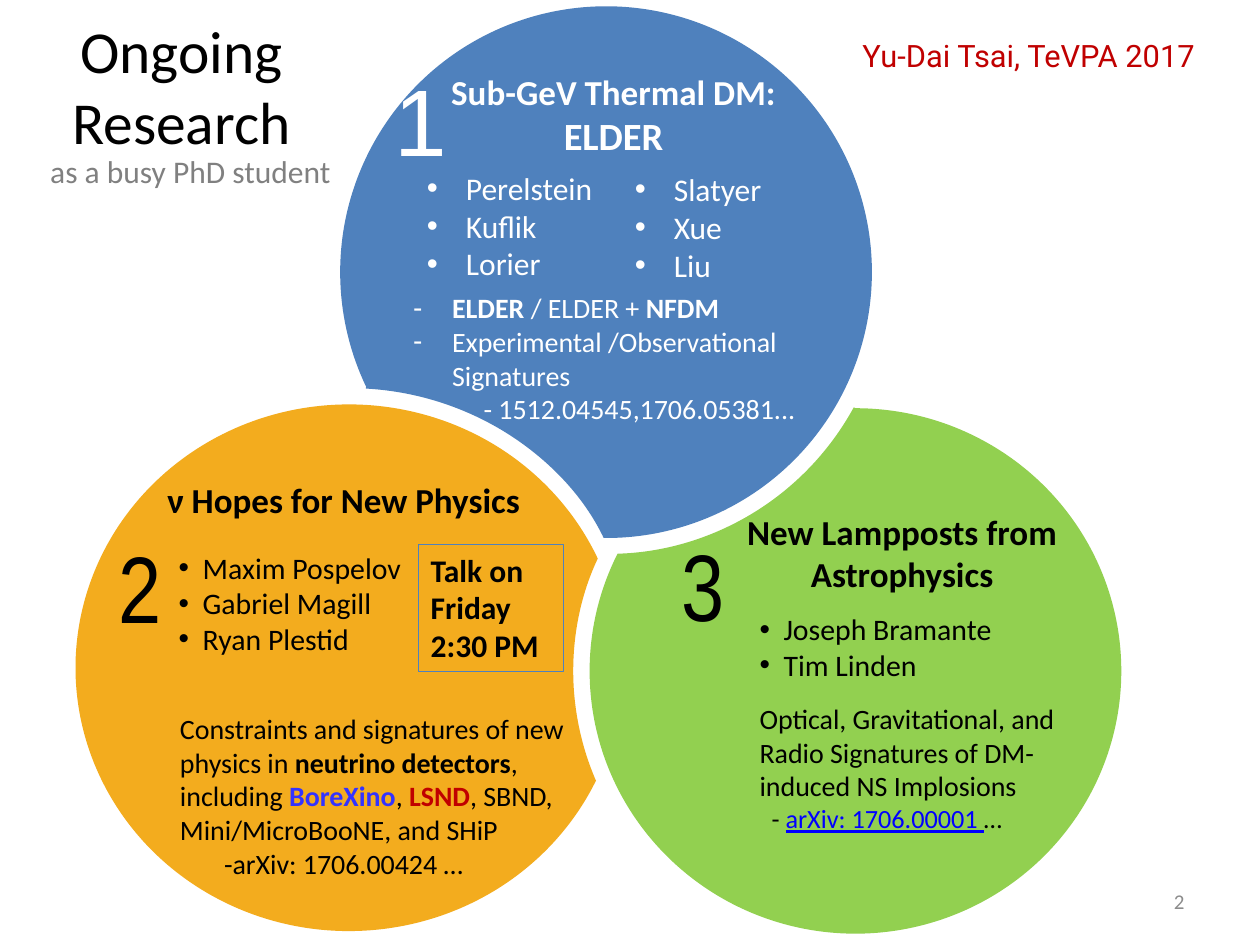
"""Build the research overview slide with three interlocking circles."""
import math
from dataclasses import dataclass
from typing import Optional

from lxml import etree
from pptx import Presentation
from pptx import util as u
from pptx.dml.color import RGBColor
from pptx.enum import shapes, text
from pptx.oxml import ns

WIDTH, HEIGHT = u.Inches(10), u.Inches(7.5)
COLUMNS = 100
CELL = WIDTH / COLUMNS
GAP = 1.3

BLACK = RGBColor(0, 0, 0)
WHITE = RGBColor(0xFF, 0xFF, 0xFF)
BLUE = RGBColor(0x4F, 0x81, 0xBD)
ORANGE = RGBColor(0xF3, 0xAC, 0x1E)
GREEN = RGBColor(0x92, 0xD0, 0x50)
RED = RGBColor(0xC0, 0, 0)
VIOLET = RGBColor(0x33, 0x33, 0xFF)
LINK = RGBColor(0, 0, 0xFF)
GRAY = RGBColor(0x80, 0x80, 0x80)
PALE = RGBColor(0x8C, 0x8C, 0x8C)

LEFT, CENTER, RIGHT = text.PP_ALIGN.LEFT, text.PP_ALIGN.CENTER, text.PP_ALIGN.RIGHT
TOP, MIDDLE = text.MSO_ANCHOR.TOP, text.MSO_ANCHOR.MIDDLE


@dataclass(frozen=True)
class Circle:
    x: float
    y: float
    rx: float
    ry: float
    color: RGBColor

    def at(self, angle: float) -> tuple[float, float]:
        return self.x + self.rx * math.cos(angle), self.y + self.ry * math.sin(angle)

    def polar(self, x: float, y: float) -> tuple[float, float]:
        dx, dy = (x - self.x) / self.rx, (y - self.y) / self.ry
        return math.hypot(dx, dy), math.atan2(dy, dx)


@dataclass(frozen=True)
class Span:
    words: str
    size: float
    color: RGBColor = BLACK
    bold: bool = False
    underline: bool = False
    font: str = "Calibri"


@dataclass(frozen=True)
class Line:
    spans: tuple[Span, ...]
    align: text.PP_ALIGN = LEFT
    bullet: str = ""
    indent: float = 0
    before: float = 0


@dataclass(frozen=True)
class Block:
    place: tuple[float, float, float, float]
    lines: tuple[Line, ...]
    anchor: text.MSO_ANCHOR = TOP
    wrap: bool = True
    border: Optional[RGBColor] = None


def cells(count: float) -> int:
    return round(count * CELL)


def single(words: str, size: float, color: RGBColor = BLACK, bold: bool = False,
           align: text.PP_ALIGN = LEFT, font: str = "Calibri") -> Line:
    return Line((Span(words, size, color, bold, font=font),), align)


def bullets(names: str, size: float, color: RGBColor, indent: float) -> tuple[Line, ...]:
    return tuple(Line((Span(name, size, color),), bullet="•", indent=indent)
                 for name in names.split(", "))


def number(digit: str, left: float, top: float, width: float, color: RGBColor, font: str) -> Block:
    return Block((left, top, width, 10.1),
                 (single(digit, 54, color, align=CENTER, font=font),), MIDDLE, False)


SUB_GEV = Circle(48.1, 21.6, 21.1, 21.1, BLUE)
NEUTRINO = Circle(27.7, 53, 21.7, 20.9, ORANGE)
LAMPPOST = Circle(67.9, 53.25, 21.1, 20.85, GREEN)
OVERLAPS = ((SUB_GEV, NEUTRINO), (NEUTRINO, LAMPPOST), (LAMPPOST, SUB_GEV))

TITLE = Block((0.5, 1.3, 27.8, 10.9),
              (single("Ongoing Research", 34, align=CENTER),), MIDDLE)

BLOCKS = (
    Block((34.7, 5.1, 28, 8.1), (
        single("Sub-GeV Thermal DM:", 20, WHITE, True, CENTER),
        single("ELDER", 22, WHITE, True, CENTER)), wrap=False),
    Block((57.8, 40, 27.6, 7.7),
          (single("New Lampposts from Astrophysics", 20, bold=True, align=CENTER),)),
    Block((13.2, 43.1, 22.1, 13.2),
          bullets("Maxim Pospelov, Gabriel Magill, Ryan Plestid", 17, BLACK, 1.9)),
    Block((12.3, 37.5, 31, 6), (single("ν Hopes for New Physics", 20, bold=True),), wrap=False),
    Block((31.8, 22.6, 34.8, 11.8), (
        Line((Span("ELDER ", 16, WHITE, True), Span("/ ELDER + ", 16, WHITE),
              Span("NFDM", 16, WHITE, True)), bullet="-", indent=3.1),
        Line((Span("Experimental /Observational Signatures", 16, WHITE),), bullet="-", indent=3.1),
        Line((Span("- 1512.04545,1706.05381...", 16, WHITE),), indent=5.6))),
    Block((59.3, 48, 26.5, 18.8), (
        *bullets("Joseph Bramante, Tim Linden", 17, BLACK, 1.9),
        Line((Span("Optical, Gravitational, and Radio Signatures of DM-induced NS Implosions", 16),),
             before=11),
        Line((Span("- ", 15), Span("arXiv: 1706.00001 ", 15, LINK, underline=True),
              Span("…", 15)), indent=0.95))),
    number("3", 53.2, 41.3, 5.2, BLACK, "Arial Narrow"),
    number("1", 30.3, 4.4, 6.2, WHITE, "Arial"),
    number("2", 8.6, 41.4, 5, BLACK, "Arial Narrow"),
    Block((71.7, 69.5, 23.3, 4), (single("2", 12, PALE, align=RIGHT),), MIDDLE),
    Block((49.4, 13, 14, 10.1), bullets("Slatyer, Xue, Liu", 18, WHITE, 3.1)),
    Block((32.9, 12.9, 15.4, 10.1), bullets("Perelstein, Kuflik, Lorier", 18, WHITE, 3.1)),
    Block((13.3, 56, 33.2, 14.5), (
        Line((Span("Constraints and signatures of new physics in ", 16),
              Span("neutrino detectors", 16, bold=True), Span(", including ", 16),
              Span("BoreXino", 16, VIOLET, True), Span(", ", 16),
              Span("LSND", 16, RED, True),
              Span(", SBND, Mini/MicroBooNE, and SHiP", 16))),
        Line((Span("-arXiv: 1706.00424 …", 16),), indent=3.5))),
    Block((33.2, 43.2, 11.5, 10.1),
          (single("Talk on Friday 2:30 PM", 18, bold=True),), border=BLUE),
    Block((64.6, 1.7, 34.1, 5.4),
          (single("Yu-Dai Tsai, TeVPA 2017", 17.6, RED, align=CENTER, font="Roboto"),), MIDDLE),
    Block((3, 11.6, 24.5, 4), (single("as a busy PhD student", 18, GRAY),), wrap=False),
)


def arc(circle: Circle, start: float, sweep: float, parts: int) -> list[tuple[int, int]]:
    """Return the Bézier points that follow the start of an arc."""
    step = sweep / parts
    pull = 4 / 3 * math.tan(step / 4)
    reach, turn = math.hypot(1, pull), math.atan(pull)
    handle = Circle(circle.x, circle.y, circle.rx * reach, circle.ry * reach, circle.color)
    points = []
    for part in range(parts):
        begin, end = start + part * step, start + (part + 1) * step
        points += [handle.at(begin + turn), handle.at(end - turn), circle.at(end)]
    return [(cells(x), cells(y)) for x, y in points]


def draw_circle(page, circle: Circle, neighbour: Circle) -> None:
    """Draw a circle with a bite taken out by its neighbour's widened rim."""
    rim = Circle(neighbour.x, neighbour.y, neighbour.rx + GAP, neighbour.ry + GAP, neighbour.color)
    angles = [math.radians(step / 2) for step in range(720)]
    inside = [rim.polar(*circle.at(angle))[0] < 1 for angle in angles]
    enter = next(a for i, a in enumerate(angles) if inside[i] and not inside[i - 1])
    leave = next(a for i, a in enumerate(angles) if inside[i - 1] and not inside[i])
    rim_start = rim.polar(*circle.at(enter))[1]
    rim_sweep = math.remainder(rim.polar(*circle.at(leave))[1] - rim_start, math.tau)
    points = arc(circle, leave, (enter - leave) % math.tau, 10)
    points += arc(rim, rim_start, rim_sweep, 3)
    builder = page.shapes.build_freeform(*map(cells, circle.at(leave)))
    builder.add_line_segments(points, close=True)
    shape = builder.convert_to_shape()
    outline = next(shape._element.iter(ns.qn("a:path")))
    segments = outline.findall(ns.qn("a:lnTo"))
    for first, second, third in zip(segments[::3], segments[1::3], segments[2::3]):
        curve = etree.Element(ns.qn("a:cubicBezTo"))
        outline.replace(first, curve)
        for segment in (first, second, third):
            curve.append(segment[0])
        outline.remove(second)
        outline.remove(third)
    shape.shadow.inherit = False
    shape.fill.solid()
    shape.fill.fore_color.rgb = circle.color
    shape.line.fill.background()


def format_para(para, line: Line) -> None:
    para.alignment = line.align
    para.line_spacing = 1.0
    para.space_before = u.Pt(line.before)
    properties = para._p.get_or_add_pPr()
    properties.set("marL", str(cells(line.indent)))
    properties.set("indent", str(-cells(line.indent) if line.bullet else 0))
    if line.bullet:
        etree.SubElement(properties, ns.qn("a:buFont"), typeface="Arial")
        etree.SubElement(properties, ns.qn("a:buChar"), char=line.bullet)


def write(box, block: Block) -> None:
    box.left, box.top, box.width, box.height = map(cells, block.place)
    frame = box.text_frame
    frame.word_wrap = block.wrap
    frame.auto_size = text.MSO_AUTO_SIZE.NONE
    frame.vertical_anchor = block.anchor
    for index, line in enumerate(block.lines):
        para = frame.add_paragraph() if index else frame.paragraphs[0]
        format_para(para, line)
        for span in line.spans:
            run = para.add_run()
            run.text = span.words
            font = run.font
            font.name, font.size = span.font, u.Pt(span.size)
            font.bold, font.underline = span.bold, span.underline
            font.color.rgb = span.color


def draw_block(page, block: Block) -> None:
    place = tuple(map(cells, block.place))
    if block.border is None:
        box = page.shapes.add_textbox(*place)
    else:
        box = page.shapes.add_shape(shapes.MSO_SHAPE.RECTANGLE, *place)
        box.shadow.inherit = False
        box.fill.background()
        box.line.color.rgb = block.border
        box.line.width = u.Pt(0.75)
    write(box, block)


def main() -> None:
    deck = Presentation()
    deck.slide_width, deck.slide_height = WIDTH, HEIGHT
    page = deck.slides.add_slide(deck.slide_layouts[5])
    write(page.shapes.title, TITLE)
    for circle, neighbour in OVERLAPS:
        draw_circle(page, circle, neighbour)
    for block in BLOCKS:
        draw_block(page, block)
    deck.save("out.pptx")


if __name__ == "__main__":
    main()
